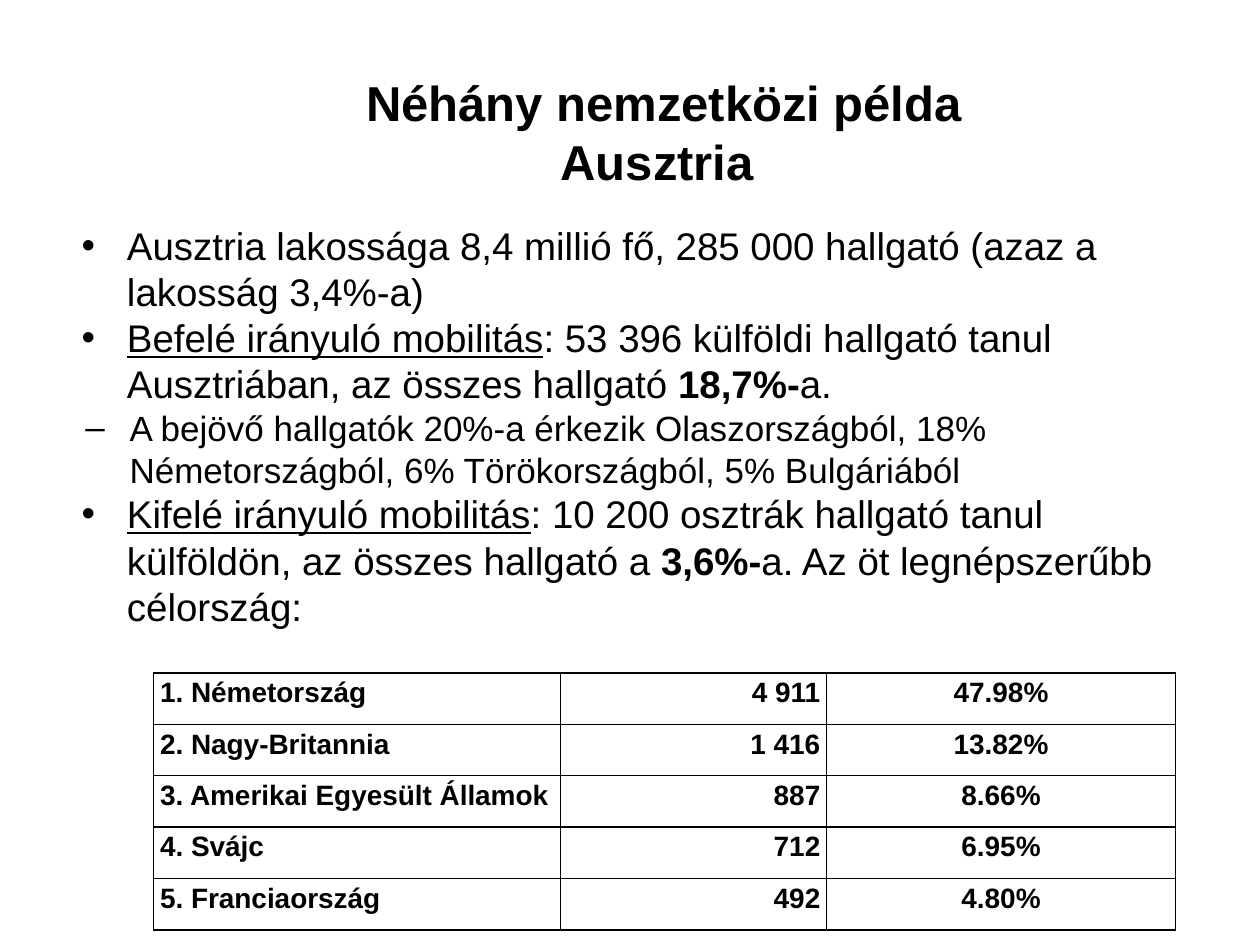
from lxml.etree import SubElement
from pptx import Presentation
from pptx.dml.color import RGBColor
from pptx.enum.text import MSO_ANCHOR, PP_ALIGN
from pptx.oxml.ns import qn
from pptx.util import Inches, Pt

COLORS = {"text": "000000", "border": "000000"}
FONT = "Arial"
PLAIN, BOLD, UNDERLINED = {}, {"bold": True}, {"underline": True}

TITLE = "Néhány nemzetközi példa Ausztria "
# Each point: level, then its pieces of text with their format
POINTS = [
    (0, [("Ausztria lakossága 8,4 millió fő, 285 000 hallgató (azaz a lakosság 3,4%-a)", PLAIN)]),
    (0, [("Befelé irányuló mobilitás", UNDERLINED),
         (": 53 396 külföldi hallgató tanul Ausztriában, az összes hallgató ", PLAIN),
         ("18,7%-", BOLD), ("a.", PLAIN)]),
    (1, [("A bejövő hallgatók 20%-a érkezik Olaszországból, 18% Németországból, "
          "6% Törökországból, 5% Bulgáriából", PLAIN)]),
    (0, [("Kifelé irányuló mobilitás", UNDERLINED),
         (": 10 200 osztrák hallgató tanul külföldön, az összes hallgató a ", PLAIN),
         ("3,6%-", BOLD), ("a. Az öt legnépszerűbb célország:", PLAIN)]),
]
LEVELS = [
    {"bullet": "•", "size": 22, "left": 0.48, "hanging": 0.36},
    {"bullet": "–", "size": 20, "left": 0.5, "hanging": 0.35},
]
DESTINATIONS = [
    ("1. Németország", "4 911", "47.98%"),
    ("2. Nagy-Britannia", "1 416", "13.82%"),
    ("3. Amerikai Egyesült Államok", "887", "8.66%"),
    ("4. Svájc", "712", "6.95%"),
    ("5. Franciaország", "492", "4.80%"),
]
COLUMNS = [(3.23, PP_ALIGN.LEFT), (2.11, PP_ALIGN.RIGHT), (2.77, PP_ALIGN.CENTER)]
TABLE_HEIGHT = 2.04
CELL_FORMAT = {"margin_left": Inches(0.05), "margin_right": Inches(0.05),
               "margin_top": 0, "margin_bottom": 0, "vertical_anchor": MSO_ANCHOR.TOP}


def set_values(target, values):
    for name, value in values.items():
        setattr(target, name, value)


def add_run(paragraph, text, size, style):
    run = paragraph.add_run()
    run.text = text
    set_values(run.font, {"name": FONT, "size": Pt(size), **style})
    run.font.color.rgb = RGBColor.from_string(COLORS["text"])


def add_text_frame(slide, left, top, width, height):
    box = slide.shapes.add_textbox(*map(Inches, (left, top, width, height)))
    set_values(box.text_frame, {"word_wrap": True, "vertical_anchor": MSO_ANCHOR.TOP})
    return box.text_frame


def add_bullet(paragraph, bullet, left, hanging):
    properties = paragraph._p.get_or_add_pPr()
    properties.set("marL", str(Inches(left)))
    properties.set("indent", str(-Inches(hanging)))
    SubElement(properties, qn("a:buFont"), typeface=FONT)
    SubElement(properties, qn("a:buChar"), char=bullet)


def add_borders(cell):
    properties = cell._tc.get_or_add_tcPr()
    for position, side in enumerate(("lnL", "lnR", "lnT", "lnB")):
        line = SubElement(properties, qn(f"a:{side}"), w=str(Pt(1)))
        fill = SubElement(line, qn("a:solidFill"))
        SubElement(fill, qn("a:srgbClr"), val=COLORS["border"])
        properties.insert(position, line)


def add_title(slide):
    paragraph = add_text_frame(slide, 2.55, 0.53, 5.44, 1.25).paragraphs[0]
    paragraph.alignment = PP_ALIGN.CENTER
    add_run(paragraph, TITLE, 28, BOLD)


def add_points(slide):
    frame = add_text_frame(slide, 0.43, 1.71, 9, 4.95)
    for index, (level, pieces) in enumerate(POINTS):
        paragraph = frame.add_paragraph() if index else frame.paragraphs[0]
        look = LEVELS[level]
        paragraph.level = level
        add_bullet(paragraph, look["bullet"], look["left"], look["hanging"])
        for text, style in pieces:
            add_run(paragraph, text, look["size"], style)


def add_destinations(slide):
    width = sum(column_width for column_width, _ in COLUMNS)
    table = slide.shapes.add_table(len(DESTINATIONS), len(COLUMNS), Inches(1.22), Inches(5.34),
                                   Inches(width), Inches(TABLE_HEIGHT)).table
    set_values(table, {"first_row": False, "horz_banding": False})
    for column, (column_width, _) in zip(table.columns, COLUMNS):
        column.width = Inches(column_width)
    for row, values in zip(table.rows, DESTINATIONS):
        row.height = Inches(TABLE_HEIGHT / len(DESTINATIONS))
        for cell, value, (_, alignment) in zip(row.cells, values, COLUMNS):
            set_values(cell, CELL_FORMAT)
            cell.fill.background()
            add_borders(cell)
            paragraph = cell.text_frame.paragraphs[0]
            set_values(paragraph, {"alignment": alignment, "line_spacing": 1.15,
                                   "space_after": Pt(3)})
            add_run(paragraph, value, 16, BOLD)


def main():
    presentation = Presentation()
    set_values(presentation, {"slide_width": Inches(10), "slide_height": Inches(7.5)})
    slide = presentation.slides.add_slide(presentation.slide_layouts[6])
    add_title(slide)
    add_points(slide)
    add_destinations(slide)
    presentation.save("out.pptx")


if __name__ == "__main__":
    main()
